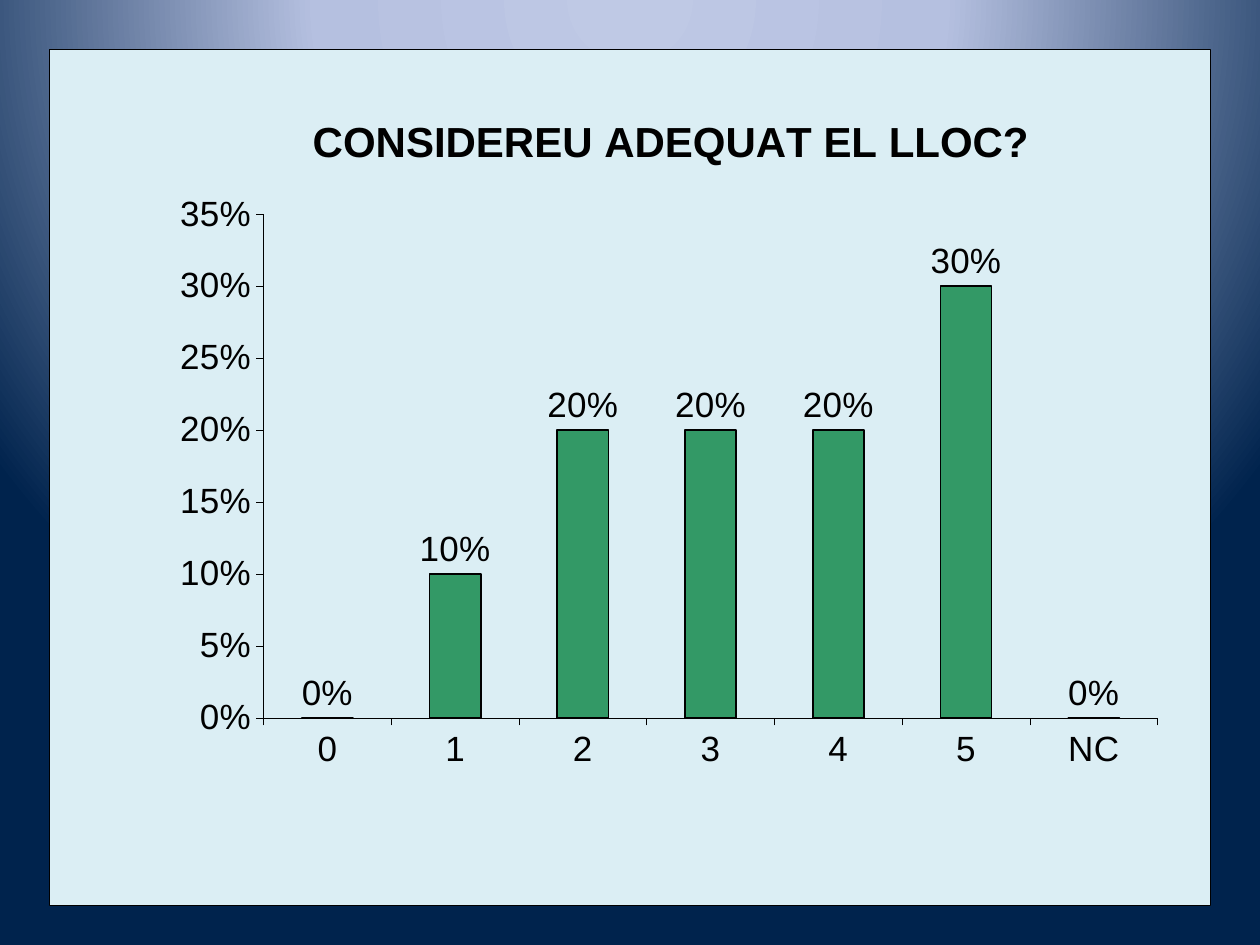
from pptx import Presentation
from pptx.chart.data import CategoryChartData
from pptx.dml.color import RGBColor
from pptx.enum.chart import XL_CHART_TYPE, XL_LABEL_POSITION, XL_TICK_MARK
from pptx.oxml import parse_xml
from pptx.oxml.ns import nsdecls, qn
from pptx.util import Inches, Pt

COLUMNS = XL_CHART_TYPE.COLUMN_CLUSTERED
ABOVE_BAR = XL_LABEL_POSITION.OUTSIDE_END
TICK_OUT, TICK_NONE = XL_TICK_MARK.OUTSIDE, XL_TICK_MARK.NONE

QUESTION = "CONSIDEREU ADEQUAT EL LLOC?"
ANSWERS = [("0", 0), ("1", 0.1), ("2", 0.2), ("3", 0.2), ("4", 0.2), ("5", 0.3), ("NC", 0)]
PERCENT = "0%"
FONT = "Arial"
COLORS = {"ink": "000000", "bar": "339966", "panel": "DBEEF4"}
BACKGROUND_STOPS = [(0, "BFC9E5"), (40, "B5C0E0"), (100, "00234D")]

PANEL = (0.39, 0.39, 9.22, 6.8)
PLOT = {"x": 1.7, "y": 1.31, "w": 7.1, "h": 4}
TITLE = {"x": 2.03, "y": 0.46}

AXIS_FORMAT = {"has_major_gridlines": False, "major_tick_mark": TICK_OUT,
               "minor_tick_mark": TICK_NONE}
SCALE_FORMAT = {"minimum_scale": 0, "maximum_scale": 0.35, "major_unit": 0.05}
LABEL_FORMAT = {"show_value": True, "number_format": PERCENT,
                "number_format_is_linked": False, "position": ABOVE_BAR}


def apply_format(target, values):
    for name, value in values.items():
        setattr(target, name, value)


def style_font(font, size, bold):
    apply_format(font, {"name": FONT, "size": Pt(size), "bold": bold})
    font.color.rgb = RGBColor.from_string(COLORS["ink"])


def style_line(line, width):
    line.color.rgb = RGBColor.from_string(COLORS["ink"])
    line.width = Pt(width)


def manual_layout(place, target=""):
    spans = {"x": PANEL[2], "w": PANEL[2], "y": PANEL[3], "h": PANEL[3]}
    fractions = "".join(f'<c:{key} val="{inches / spans[key]:.4f}"/>'
                        for key, inches in place.items())
    return parse_xml(
        f'<c:layout {nsdecls("c")}><c:manualLayout>{target}'
        f'<c:xMode val="edge"/><c:yMode val="edge"/>{fractions}'
        '</c:manualLayout></c:layout>')


def drop_layout(parent):
    for layout in parent.findall(qn("c:layout")):
        parent.remove(layout)


def paint_background(slide):
    stops = "".join(f'<a:gs pos="{pos * 1000}"><a:srgbClr val="{color}"/></a:gs>'
                    for pos, color in BACKGROUND_STOPS)
    slide.element.cSld.insert(0, parse_xml(
        f'<p:bg {nsdecls("p", "a")}><p:bgPr><a:gradFill><a:gsLst>{stops}</a:gsLst>'
        '<a:path path="circle"><a:fillToRect l="50000" t="-80000" r="50000" b="180000"/>'
        '</a:path></a:gradFill><a:effectLst/></p:bgPr></p:bg>'))


def add_answers_chart(slide):
    data = CategoryChartData(number_format=PERCENT)
    data.categories = [answer for answer, _ in ANSWERS]
    data.add_series("Series 1", [share for _, share in ANSWERS])
    chart = slide.shapes.add_chart(COLUMNS, *map(Inches, PANEL), data).chart
    chart.has_legend = False
    style_font(chart.font, 20, False)

    chart.has_title = True
    title = chart.chart_title
    title.text_frame.text = QUESTION
    style_font(title.text_frame.paragraphs[0].runs[0].font, 24, True)

    for axis in (chart.category_axis, chart.value_axis):
        apply_format(axis, AXIS_FORMAT)
        style_line(axis.format.line, 0.25)
    apply_format(chart.value_axis, SCALE_FORMAT)
    apply_format(chart.value_axis.tick_labels,
                 {"number_format": PERCENT, "number_format_is_linked": False})

    bars = chart.plots[0]
    apply_format(bars, {"gap_width": 150, "vary_by_categories": False,
                        "has_data_labels": True})
    apply_format(bars.data_labels, LABEL_FORMAT)
    style_font(bars.data_labels.font, 20, False)
    shares = bars.series[0]
    shares.format.fill.solid()
    shares.format.fill.fore_color.rgb = RGBColor.from_string(COLORS["bar"])
    style_line(shares.format.line, 1)

    chart_space = chart.element
    plot_area = chart_space.find(qn("c:chart")).find(qn("c:plotArea"))
    drop_layout(plot_area)
    plot_area.insert(0, manual_layout(PLOT, '<c:layoutTarget val="inner"/>'))
    heading = chart_space.find(qn("c:chart")).find(qn("c:title"))
    drop_layout(heading)
    heading.find(qn("c:tx")).addnext(manual_layout(TITLE))
    chart_space.find(qn("c:txPr")).addprevious(parse_xml(
        f'<c:spPr {nsdecls("c", "a")}>'
        f'<a:solidFill><a:srgbClr val="{COLORS["panel"]}"/></a:solidFill>'
        f'<a:ln w="{Pt(0.25)}"><a:solidFill><a:srgbClr val="{COLORS["ink"]}"/>'
        '</a:solidFill></a:ln></c:spPr>'))


def main():
    deck = Presentation()
    deck.slide_width, deck.slide_height = Inches(10), Inches(7.5)
    slide = deck.slides.add_slide(deck.slide_layouts[6])
    paint_background(slide)
    add_answers_chart(slide)
    deck.save("out.pptx")


if __name__ == "__main__":
    main()
